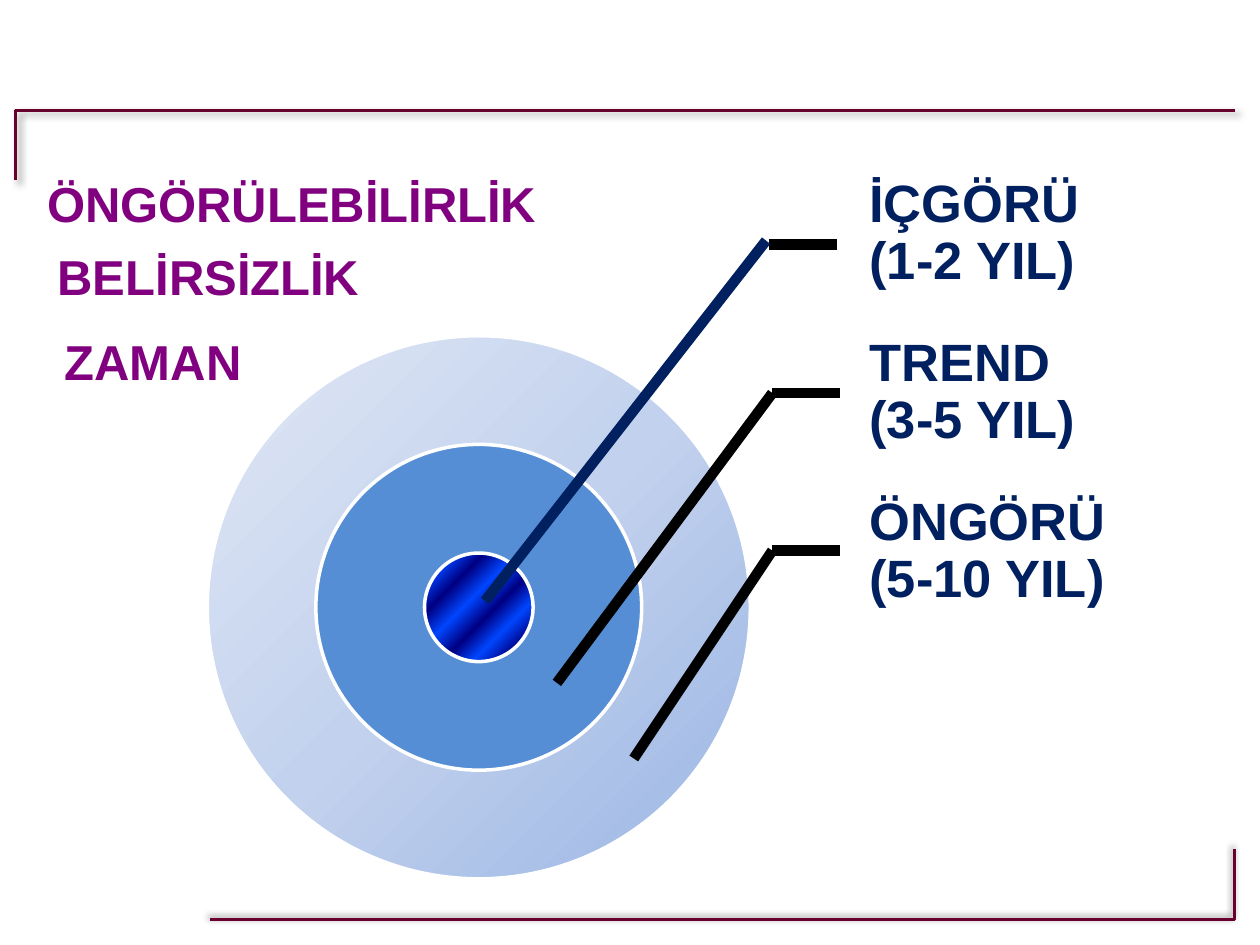
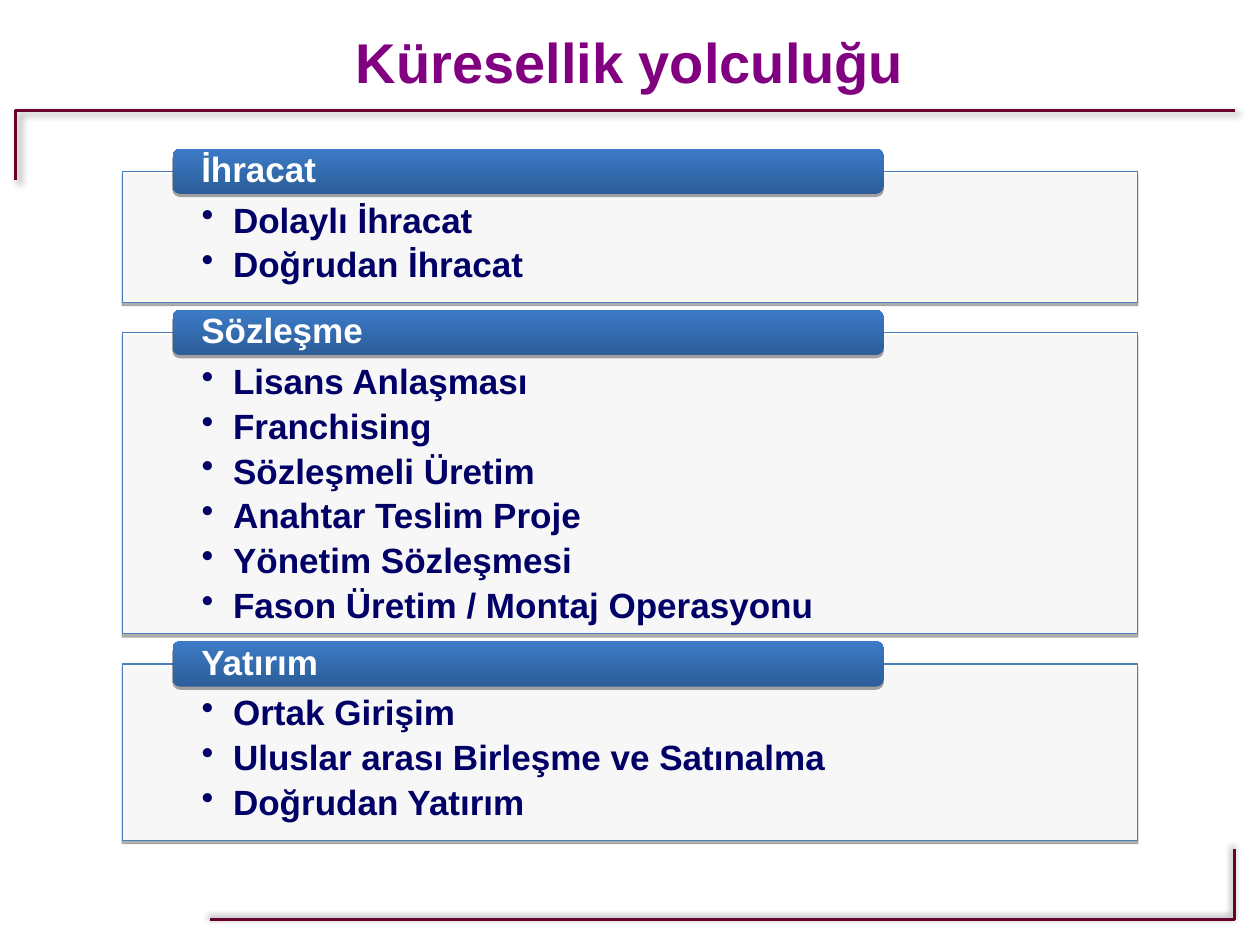
from lxml import etree
from pptx import Presentation
from pptx.dml.color import RGBColor
from pptx.enum.shapes import MSO_CONNECTOR, MSO_SHAPE
from pptx.enum.text import MSO_ANCHOR, MSO_AUTO_SIZE, PP_ALIGN
from pptx.oxml.ns import qn
from pptx.util import Inches, Pt

OVAL, RECT, ROUNDED = MSO_SHAPE.OVAL, MSO_SHAPE.RECTANGLE, MSO_SHAPE.ROUNDED_RECTANGLE
STRAIGHT = MSO_CONNECTOR.STRAIGHT
TOP, MIDDLE = MSO_ANCHOR.TOP, MSO_ANCHOR.MIDDLE
LEFT, CENTER = PP_ALIGN.LEFT, PP_ALIGN.CENTER
GROW = MSO_AUTO_SIZE.SHAPE_TO_FIT_TEXT

WIDTH, HEIGHT = 10, 7.5
FONT = "Arial"
PURPLE, MAROON, NAVY, INK = "800080", "6A002D", "002060", "000066"
WHITE, BLACK, PANEL_LINE = "FFFFFF", "000000", "4A7EBB"

# Content: axes of the horizon diagram, as (text, left, top, width)
AXES = [
    ("ÖNGÖRÜLEBİLİRLİK", 0.27, 1.13, 4.09),
    ("BELİRSİZLİK", 0.12, 1.71, 3.07),
    ("ZAMAN", 0.35, 2.39, 1.73),
]
# Rings, as (share of the outer diameter, colour stops, gradient angle)
RINGS = [
    (1, [(0, "9AB5E4"), (50, "C2D1ED"), (100, "E1E8F5")], 225),
    (0.6, [(0, "558ED5"), (100, "558ED5")], 0),
    (0.2, [(stop, ("000082", "0047FF")[i % 2])
           for i, stop in enumerate((0, 13, 28, 43, 58, 72, 87, 100))], 45),
]
RING_CENTER, RING_DIAMETER = (3.8, 4.82), 4.31
# Horizons: label, tick start, elbow, point inside the ring, colour of the leader
HORIZONS = [
    ("İÇGÖRÜ (1-2 YIL)", (6.1, 1.94), (6.08, 1.91), (3.85, 4.77), NAVY),
    ("TREND (3-5 YIL)", (6.13, 3.12), (6.13, 3.12), (4.42, 5.42), BLACK),
    ("ÖNGÖRÜ (5-10 YIL)", (6.13, 4.37), (6.13, 4.37), (5.03, 6.02), BLACK),
]
LABEL_LEFT, LABEL_TOP, LABEL_WIDTH, LABEL_STEP, TICK = 6.67, 1.23, 2.16, 1.26, 0.54

# Content: stages of going global, as (heading, panel height, entries)
TITLE = "Küresellik yolculuğu"
STAGES = [
    ("İhracat", 1.04, ["Dolaylı İhracat", "Doğrudan İhracat"]),
    ("Sözleşme", 2.39, ["Lisans Anlaşması", "Franchising", "Sözleşmeli Üretim",
                        "Anahtar Teslim Proje", "Yönetim Sözleşmesi",
                        "Fason Üretim / Montaj Operasyonu"]),
    ("Yatırım", 1.4, ["Ortak Girişim", "Uluslar arası Birleşme ve Satınalma",
                      "Doğrudan Yatırım"]),
]
STAGE_TOP, STAGE_GAP = 1.18, 0.06
PANEL_LEFT, PANEL_WIDTH = 0.97, 8.06
TAB_LEFT, TAB_HEIGHT, TAB_SHARE = 1.37, 0.36, 0.7
TAB_STOPS = [(0, "2C5D98"), (100, "3C7BC7")]

# Corner frames, as (points, shadow direction), and shadows as (alpha, blur, distance)
FRAMES = [
    ([(1.67, 7.3), (9.8, 7.3), (9.8, 6.74)], 225),
    ([(9.8, 0.88), (0.12, 0.88), (0.12, 1.43)], 45),
]
FRAME_SHADOW, STAGE_SHADOW = (40, 4, 3), (35, 0, 1.8)


def color(hex_code):
    return RGBColor.from_string(hex_code)


def add_xml(parent, tag, **attributes):
    return etree.SubElement(parent, qn(tag), {k: str(v) for k, v in attributes.items()})


def set_line(shape, hex_code, width):
    shape.line.color.rgb = color(hex_code)
    shape.line.width = Pt(width)


def set_shadow(shape, alpha, blur, distance, direction):
    shape.shadow.inherit = False
    effects = shape._element.spPr.find(qn("a:effectLst"))
    outer = add_xml(effects, "a:outerShdw", blurRad=Pt(blur), dist=Pt(distance),
                    dir=direction * 60000, algn="ctr", rotWithShape=0)
    tint = add_xml(outer, "a:srgbClr", val=BLACK)
    add_xml(tint, "a:alpha", val=alpha * 1000)


def set_gradient(shape, stops, angle):
    shape.fill.gradient()
    shape.fill.gradient_angle = (360 - angle) % 360
    stop_list = shape._element.spPr.find(qn("a:gradFill")).find(qn("a:gsLst"))
    for old in list(stop_list):
        stop_list.remove(old)
    for position, hex_code in stops:
        stop = add_xml(stop_list, "a:gs", pos=position * 1000)
        add_xml(stop, "a:srgbClr", val=hex_code)


def write(shape, lines, size, hex_code, align=LEFT, anchor=MIDDLE, spacing=1.0,
          after=0, insets=(0, 0.05, 0, 0.05), bullet=False):
    frame = shape.text_frame
    frame.word_wrap = True
    frame.vertical_anchor = anchor
    (frame.margin_left, frame.margin_top,
     frame.margin_right, frame.margin_bottom) = map(Inches, insets)
    frame.text = "\n".join(lines)
    for paragraph in frame.paragraphs:
        if bullet:
            props = paragraph._p.get_or_add_pPr()
            props.set("marL", str(Inches(0.25)))
            props.set("indent", str(-Inches(0.25)))
            add_xml(props, "a:buChar", char="•")
        paragraph.alignment = align
        paragraph.line_spacing = spacing
        paragraph.space_after = Pt(after)
        for run in paragraph.runs:
            run.font.name, run.font.size, run.font.bold = FONT, Pt(size), True
            run.font.color.rgb = color(hex_code)


def add_box(slide, left, top, width, height):
    return slide.shapes.add_textbox(*map(Inches, (left, top, width, height)))


def add_shape(slide, kind, left, top, width, height):
    shape = slide.shapes.add_shape(kind, *map(Inches, (left, top, width, height)))
    shape.shadow.inherit = False
    return shape


def add_leader(slide, start, end, hex_code):
    leader = slide.shapes.add_connector(STRAIGHT, *map(Inches, (*start, *end)))
    set_line(leader, hex_code, 6)
    add_xml(leader._element.spPr, "a:effectLst")


def add_framed_slide(prs):
    slide = prs.slides.add_slide(prs.slide_layouts[6])
    for (first, *rest), direction in FRAMES:
        builder = slide.shapes.build_freeform(*map(Inches, first))
        builder.add_line_segments([tuple(map(Inches, point)) for point in rest], close=False)
        corner = builder.convert_to_shape()
        corner.fill.background()
        set_line(corner, MAROON, 1.75)
        set_shadow(corner, *FRAME_SHADOW, direction)
    return slide


def build_horizons(prs):
    slide = add_framed_slide(prs)
    # Concentric rings
    for share, stops, angle in RINGS:
        diameter = share * RING_DIAMETER
        left, top = (middle - diameter / 2 for middle in RING_CENTER)
        ring = add_shape(slide, OVAL, left, top, diameter, diameter)
        set_gradient(ring, stops, angle)
        set_line(ring, WHITE, 2)
    # Labels with their leaders
    for row, (label, tick, elbow, target, hex_code) in enumerate(HORIZONS):
        box = add_box(slide, LABEL_LEFT, LABEL_TOP + row * LABEL_STEP, LABEL_WIDTH, LABEL_STEP)
        write(box, [label], 30, NAVY, spacing=0.9, insets=(0.23, 0.04, 0.04, 0.04))
        add_leader(slide, tick, (tick[0] + TICK, tick[1]), BLACK)
        add_leader(slide, elbow, target, hex_code)
    # Axis names
    for axis, left, top, width in AXES:
        box = add_box(slide, left, top, width, 0.72)
        write(box, [axis], 28, PURPLE, CENTER, spacing=1.5)
        box.text_frame.auto_size = GROW


def build_stages(prs):
    slide = add_framed_slide(prs)
    write(add_box(slide, 0, 0.17, WIDTH, 0.64), [TITLE], 32, PURPLE, CENTER, TOP)
    tab_top = STAGE_TOP
    for heading, height, entries in STAGES:
        # Panel starts halfway down its heading tab
        panel_top = tab_top + TAB_HEIGHT / 2
        panel = add_shape(slide, RECT, PANEL_LEFT, panel_top, PANEL_WIDTH, height)
        panel.fill.solid()
        panel.fill.fore_color.rgb = color(WHITE)
        tint = panel._element.spPr.find(qn("a:solidFill")).find(qn("a:srgbClr"))
        add_xml(tint, "a:alpha", val=90000)
        set_line(panel, PANEL_LINE, 0.75)
        set_shadow(panel, *STAGE_SHADOW, 90)
        write(panel, entries, 20, INK, anchor=TOP, spacing=0.9, after=4,
              insets=(0.63, 0.25, 0.63, 0.16), bullet=True)

        tab = add_shape(slide, ROUNDED, TAB_LEFT, tab_top, PANEL_WIDTH * TAB_SHARE, TAB_HEIGHT)
        set_gradient(tab, TAB_STOPS, 270)
        tab.line.fill.background()
        set_shadow(tab, *STAGE_SHADOW, 90)
        write(tab, [heading], 20, WHITE, spacing=0.9, insets=(0.21, 0, 0.21, 0))
        tab_top = panel_top + height + STAGE_GAP


def main():
    prs = Presentation()
    prs.slide_width, prs.slide_height = Inches(WIDTH), Inches(HEIGHT)
    build_horizons(prs)
    build_stages(prs)
    prs.save("out.pptx")


if __name__ == "__main__":
    main()
